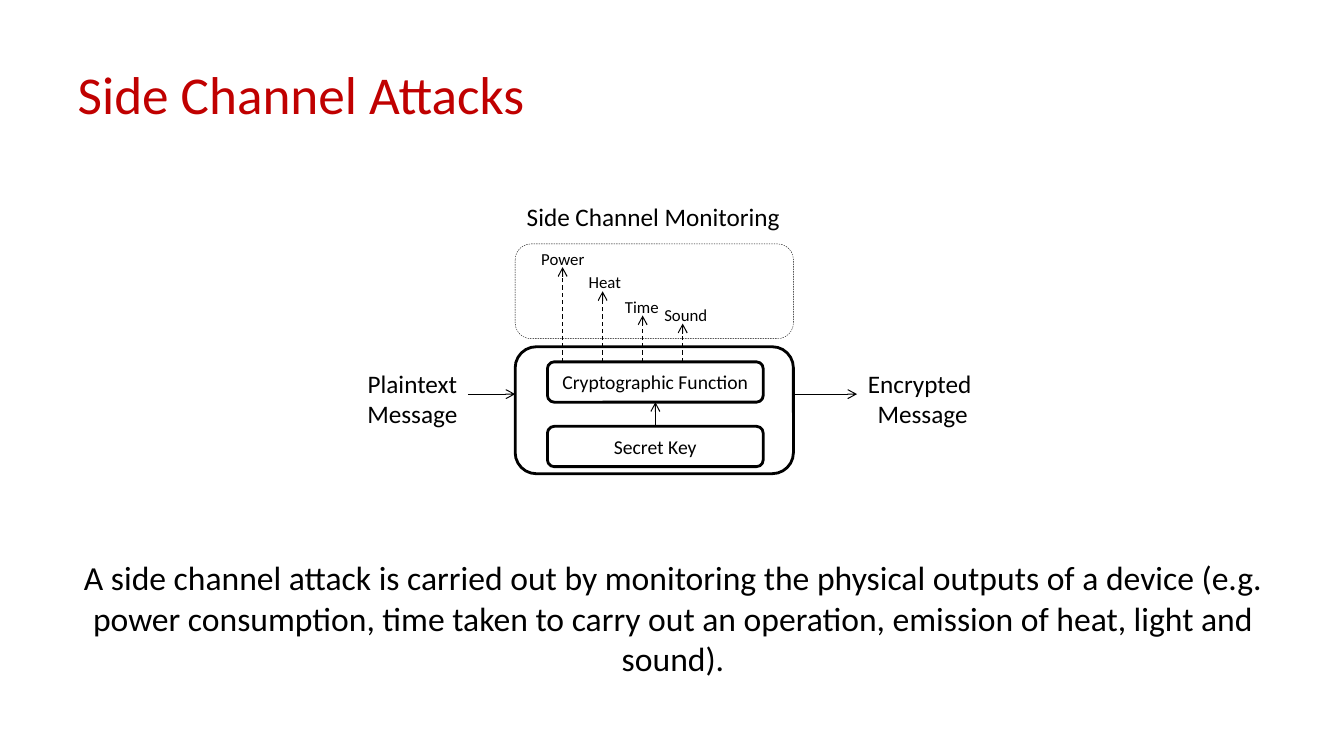
from dataclasses import dataclass
from typing import Any, Optional

import pptx
import pptx.dml.color
import pptx.enum.dml
import pptx.enum.shapes
import pptx.enum.text
import pptx.oxml
import pptx.oxml.ns
import pptx.util

Inches = pptx.util.Inches
Pt = pptx.util.Pt
ALIGN = pptx.enum.text.PP_ALIGN
ANCHOR = pptx.enum.text.MSO_ANCHOR
FIT = pptx.enum.text.MSO_AUTO_SIZE
DASH = pptx.enum.dml.MSO_LINE.DASH
BLACK = "000000"
RED = "C00000"


@dataclass
class Box:
    left: float
    top: float
    width: float
    height: float
    weight: float = 2
    text: str = ""
    dashed: bool = False


@dataclass
class Label:
    text: str
    left: float
    top: float
    width: float
    height: float
    size: float = 18
    align: Any = ALIGN.CENTER
    wrap: bool = False


@dataclass
class Signal:
    name: str
    left: float
    top: float
    width: float
    tip: float


def color(code: str) -> pptx.dml.color.RGBColor:
    return pptx.dml.color.RGBColor.from_string(code)


def write(shape: Any, text: str, size: float = 18, tint: str = BLACK,
          align: Any = ALIGN.CENTER, anchor: Any = ANCHOR.TOP,
          wrap: bool = True, fit: Any = FIT.NONE) -> None:
    frame = shape.text_frame
    frame.text = text
    frame.word_wrap = wrap
    frame.auto_size = fit
    frame.vertical_anchor = anchor
    for para in frame.paragraphs:
        para.alignment = align
        para.font.name = "Calibri"
        para.font.size = Pt(size)
        para.font.color.rgb = color(tint)


def stroke(shape: Any, weight: float, dashed: bool) -> None:
    shape.line.color.rgb = color(BLACK)
    shape.line.width = Pt(weight)
    if dashed:
        shape.line.dash_style = DASH


def place(shape: Any, left: float, top: float, width: float, height: float) -> None:
    shape.left, shape.top = Inches(left), Inches(top)
    shape.width, shape.height = Inches(width), Inches(height)


def add_box(slide: Any, box: Box) -> Any:
    shape = slide.shapes.add_shape(
        pptx.enum.shapes.MSO_SHAPE.ROUNDED_RECTANGLE, Inches(box.left),
        Inches(box.top), Inches(box.width), Inches(box.height))
    shape.shadow.inherit = False
    shape.fill.background()
    stroke(shape, box.weight, box.dashed)
    if box.text:
        write(shape, box.text, size=14, anchor=ANCHOR.MIDDLE)
    return shape


def add_label(slide: Any, label: Label) -> None:
    shape = slide.shapes.add_textbox(
        Inches(label.left), Inches(label.top),
        Inches(label.width), Inches(label.height))
    write(shape, label.text, size=label.size, align=label.align,
          wrap=label.wrap, fit=FIT.SHAPE_TO_FIT_TEXT)


def add_arrow(slide: Any, x1: float, y1: float, x2: float, y2: float,
              dashed: bool = False, start: Optional[Any] = None,
              end: Optional[Any] = None) -> None:
    arrow = slide.shapes.add_connector(
        pptx.enum.shapes.MSO_CONNECTOR.STRAIGHT,
        Inches(x1), Inches(y1), Inches(x2), Inches(y2))
    if start is not None:
        arrow.begin_connect(start, 0)
    if end is not None:
        arrow.end_connect(end, 2)
    stroke(arrow, 0.75, dashed)
    props = arrow.line._get_or_add_ln()
    tail = pptx.oxml.parse_xml(
        f'<a:tailEnd {pptx.oxml.ns.nsdecls("a")} type="arrow"/>')
    props.append(tail)
    props.addnext(pptx.oxml.parse_xml(
        f'<a:effectLst {pptx.oxml.ns.nsdecls("a")}/>'))


DEVICE = Box(5.11, 3.44, 2.76, 1.26)
CRYPTO = Box(5.43, 3.59, 2.14, 0.4, text="Cryptographic Function")
SECRET = Box(5.43, 4.23, 2.14, 0.4, text="Secret Key")
MONITOR = Box(5.11, 2.42, 2.76, 0.94, weight=0.25, dashed=True)

SIGNALS = [
    Signal("Power", 5.27, 2.42, 0.64, 2.65),
    Signal("Heat", 5.74, 2.65, 0.53, 2.89),
    Signal("Time", 6.1, 2.89, 0.54, 3.13),
    Signal("Sound", 6.49, 2.97, 0.63, 3.21),
]
FIRST, STEP = 5.58, 0.397

LABELS = [
    Label("Plaintext\nMessage", 3.54, 3.6, 1.1, 0.71),
    Label("Encrypted \nMessage", 8.5, 3.6, 1.3, 0.71),
    Label("Side Channel Monitoring", 5.11, 1.95, 2.74, 0.4),
    Label("A side channel attack is carried out by monitoring the physical "
          "outputs of a device (e.g. power consumption, time taken to carry "
          "out an operation, emission of heat, light and sound).",
          0.6, 5.48, 12.15, 1.31, size=24, wrap=True),
]


def main() -> None:
    deck = pptx.Presentation()
    deck.slide_width, deck.slide_height = Inches(13.33), Inches(7.5)
    slide = deck.slides.add_slide(deck.slide_layouts[5])

    # Title
    title = slide.shapes.title
    place(title, 0.67, 0.3, 12, 1.25)
    write(title, "Side Channel Attacks", size=38, tint=RED,
          align=ALIGN.LEFT, anchor=ANCHOR.MIDDLE)

    # Device with its key and function
    add_box(slide, DEVICE)
    crypto = add_box(slide, CRYPTO)
    secret = add_box(slide, SECRET)
    add_arrow(slide, 6.5, 4.23, 6.5, 3.99, start=secret, end=crypto)

    # Message flow
    right = DEVICE.left + DEVICE.width
    add_arrow(slide, 4.64, 3.91, DEVICE.left, 3.91)
    add_arrow(slide, right, 3.91, 8.5, 3.91)

    # Side channel signals
    add_box(slide, MONITOR)
    for i, signal in enumerate(SIGNALS):
        x = FIRST + i * STEP
        add_arrow(slide, x, CRYPTO.top, x, signal.tip, dashed=True)
        add_label(slide, Label(signal.name, signal.left, signal.top,
                               signal.width, 0.3, size=12, align=ALIGN.LEFT))

    # Captions and summary
    for label in LABELS:
        add_label(slide, label)

    deck.save("out.pptx")


if __name__ == "__main__":
    main()
